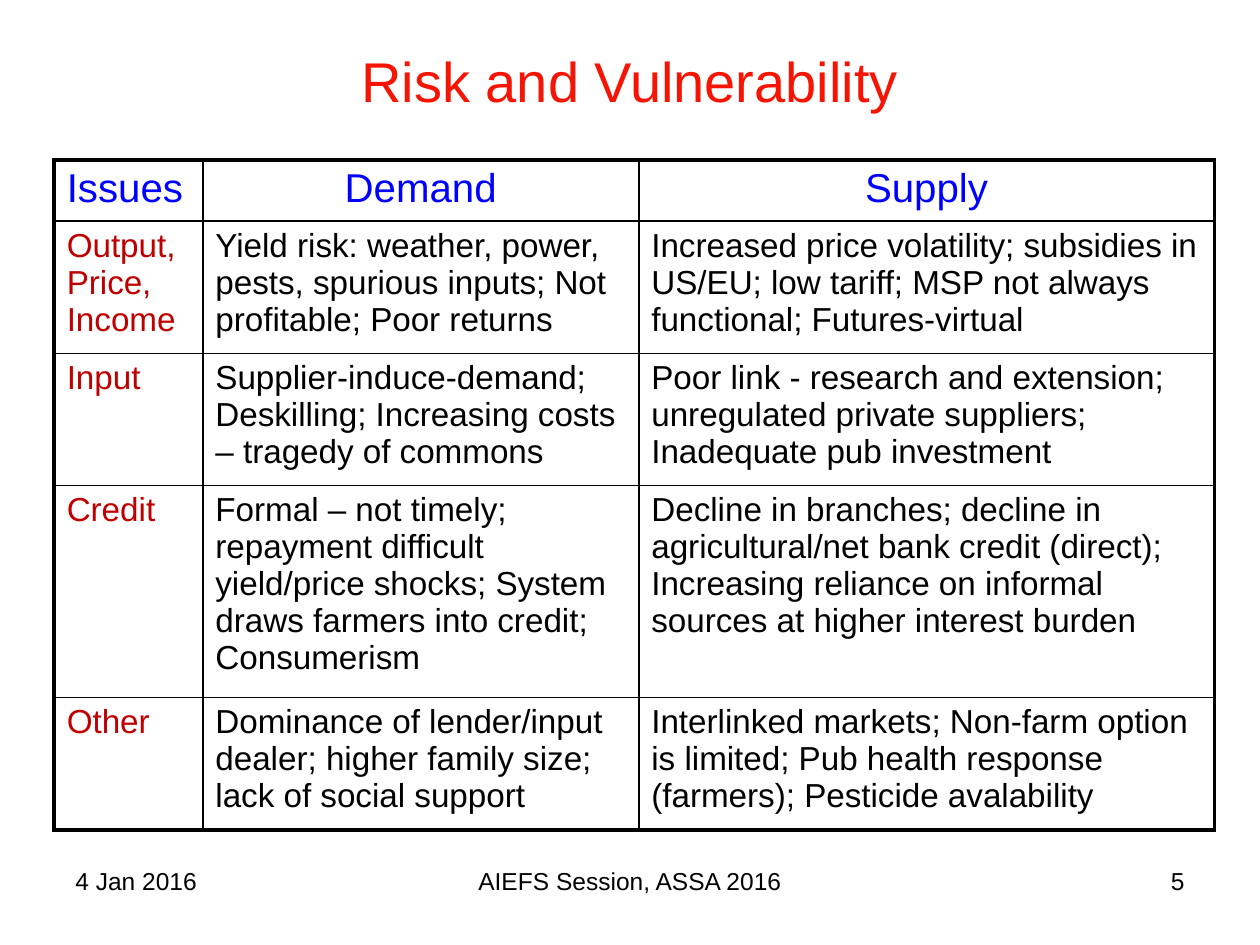
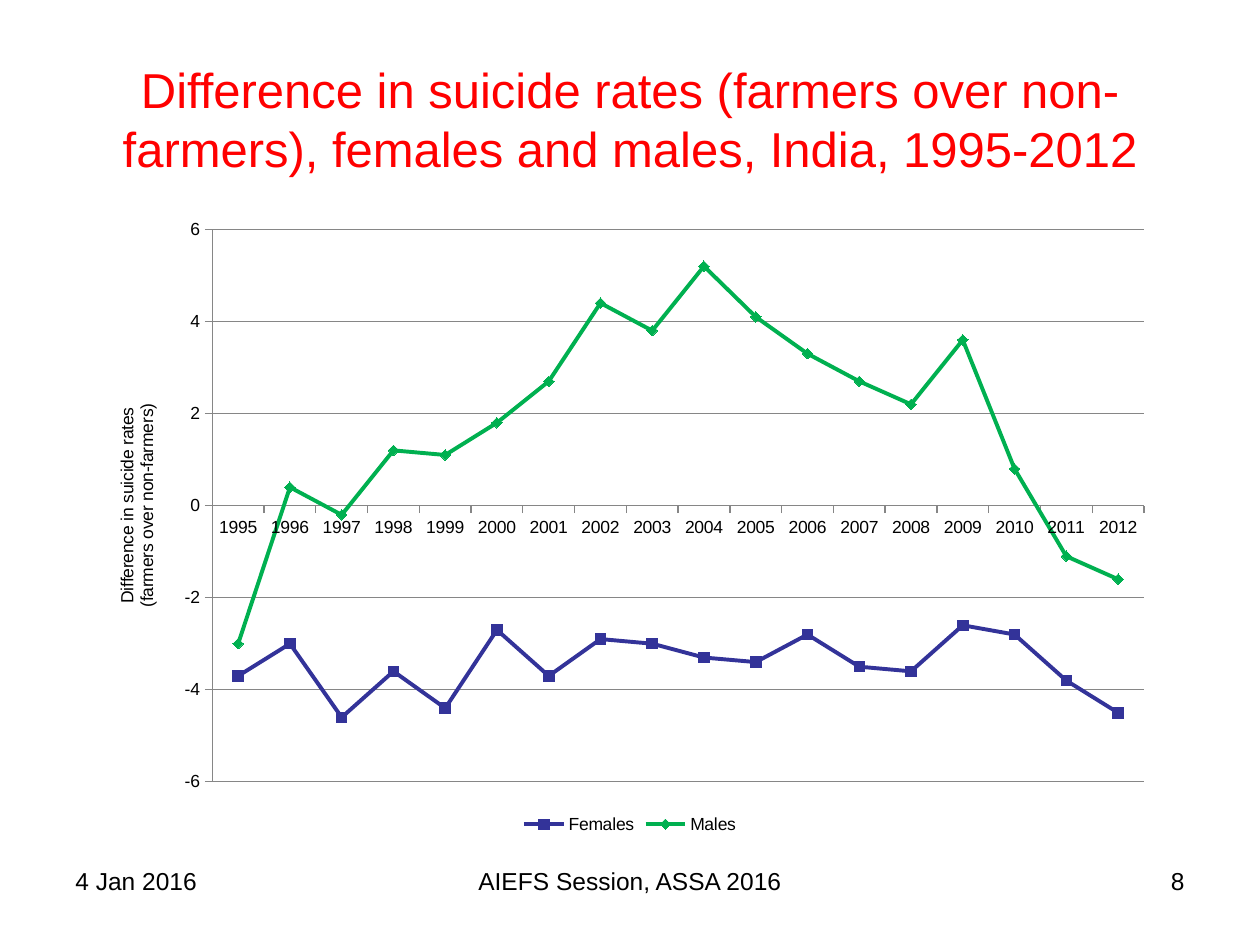
from lxml import etree
from pptx import Presentation
from pptx.chart.data import CategoryChartData
from pptx.dml.color import RGBColor
from pptx.enum.chart import XL_CHART_TYPE, XL_LEGEND_POSITION, XL_MARKER_STYLE, XL_TICK_MARK
from pptx.enum.text import MSO_ANCHOR, PP_ALIGN
from pptx.oxml import parse_xml
from pptx.oxml.ns import nsdecls, qn
from pptx.util import Inches, Pt

LEFT, CENTER, RIGHT = PP_ALIGN.LEFT, PP_ALIGN.CENTER, PP_ALIGN.RIGHT
TOP, MIDDLE = MSO_ANCHOR.TOP, MSO_ANCHOR.MIDDLE
LINE_MARKERS = XL_CHART_TYPE.LINE_MARKERS
LEGEND_BOTTOM = XL_LEGEND_POSITION.BOTTOM
SQUARE, DIAMOND = XL_MARKER_STYLE.SQUARE, XL_MARKER_STYLE.DIAMOND
OUTSIDE = XL_TICK_MARK.OUTSIDE

FONT = "Arial"
COLORS = {
    "title": "F61504",
    "chart title": "FF0000",
    "header": "0000FF",
    "issue": "C00000",
    "text": "000000",
    "axis": "868686",
    "females": "333399",
    "males": "00B050",
    "paper": "FFFFFF",
}

deck = Presentation()
deck.slide_width, deck.slide_height = Inches(10), Inches(7.5)
WIDTH, HEIGHT = deck.slide_width, deck.slide_height
MARGIN = 0.05


def style_text(frame, size, color, align=LEFT, anchor=TOP):
    frame.word_wrap = True
    frame.vertical_anchor = anchor
    for para in frame.paragraphs:
        para.alignment = align
        for span in para.runs:
            span.font.name = FONT
            span.font.size = Pt(size)
            span.font.bold = False
            span.font.color.rgb = RGBColor.from_string(COLORS[color])


def add_text(page, text, left, top, width, height, *style):
    box = page.shapes.add_textbox(
        int(left * WIDTH), int(top * HEIGHT), int(width * WIDTH), int(height * HEIGHT))
    box.text_frame.text = text
    style_text(box.text_frame, *style)


titles = [
    ("Risk and Vulnerability", 0.09, 32, "title", 5),
    ("Difference in suicide rates (farmers over non-farmers), females and males, India, 1995-2012",
     0.17, 28, "chart title", 8),
]
pages = []
for title, height, size, color, number in titles:
    page = deck.slides.add_slide(deck.slide_layouts[6])
    add_text(page, title, MARGIN, 0.04, 1 - 2 * MARGIN, height, size, color, CENTER, MIDDLE)
    footers = [
        ("4 Jan 2016", MARGIN, 0.23, LEFT),
        ("AIEFS Session, ASSA 2016", 0.34, 0.32, CENTER),
        (str(number), 1 - MARGIN - 0.23, 0.23, RIGHT),
    ]
    for text, left, width, align in footers:
        add_text(page, text, left, 0.91, width, 0.07, 14, "text", align)
    pages.append(page)
risk_page, chart_page = pages

risk_rows = [
    ("Issues", "Demand", "Supply"),
    ("Output, Price, Income",
     "Yield risk: weather, power, pests, spurious inputs; Not profitable; Poor returns",
     "Increased price volatility; subsidies in US/EU; low tariff; MSP not always functional; Futures-virtual"),
    ("Input",
     "Supplier-induce-demand; Deskilling; Increasing costs – tragedy of commons",
     "Poor link - research and extension; unregulated private suppliers; Inadequate pub investment"),
    ("Credit",
     "Formal – not timely; repayment difficult yield/price shocks; System draws farmers into credit; Consumerism",
     "Decline in branches; decline in agricultural/net bank credit (direct); Increasing reliance on informal "
     "sources at higher interest burden"),
    ("Other",
     "Dominance of lender/input dealer; higher family size; lack of social support",
     "Interlinked markets; Non-farm option is limited; Pub health response (farmers); Pesticide avalability"),
]
column_widths = [1.18, 3.46, 4.57]
row_heights = [0.48, 1.05, 1.05, 1.68, 1.05]
last_row, last_column = len(row_heights) - 1, len(column_widths) - 1

risk_table = risk_page.shapes.add_table(
    len(row_heights), len(column_widths), Inches(0.43), Inches(1.27),
    Inches(sum(column_widths)), Inches(sum(row_heights))).table
risk_table.first_row = risk_table.horz_banding = False
for column, width in zip(risk_table.columns, column_widths):
    column.width = Inches(width)
for row, height in zip(risk_table.rows, row_heights):
    row.height = Inches(height)

for r, texts in enumerate(risk_rows):
    for c, text in enumerate(texts):
        cell = risk_table.cell(r, c)
        cell.text_frame.text = text
        if r == 0:
            style_text(cell.text_frame, 23, "header", CENTER if c else LEFT)
        else:
            style_text(cell.text_frame, 19, "text" if c else "issue")
        outer_sides = {"lnL": c == 0, "lnR": c == last_column, "lnT": r == 0, "lnB": r == last_row}
        properties = cell._tc.get_or_add_tcPr()
        for side, outer in outer_sides.items():
            border = etree.SubElement(properties, qn("a:" + side), w=str(Pt(2.25 if outer else 1)))
            fill = etree.SubElement(border, qn("a:solidFill"))
            etree.SubElement(fill, qn("a:srgbClr"), val=COLORS["text"])
        cell.fill.solid()
        cell.fill.fore_color.rgb = RGBColor.from_string(COLORS["paper"])

rates = CategoryChartData()
rates.categories = [str(year) for year in range(1995, 2013)]
rates.add_series("Females", [-3.7, -3, -4.6, -3.6, -4.4, -2.7, -3.7, -2.9, -3,
                             -3.3, -3.4, -2.8, -3.5, -3.6, -2.6, -2.8, -3.8, -4.5])
rates.add_series("Males", [-3, 0.4, -0.2, 1.2, 1.1, 1.8, 2.7, 4.4, 3.8,
                           5.2, 4.1, 3.3, 2.7, 2.2, 3.6, 0.8, -1.1, -1.6])
chart = chart_page.shapes.add_chart(
    LINE_MARKERS, Inches(0.75), Inches(1.62), Inches(8.5), Inches(5.04), rates).chart
chart.has_title = False
chart.font.name = FONT
chart.font.size = Pt(10)
chart.font.color.rgb = RGBColor.from_string(COLORS["text"])
chart.has_legend = True
chart.legend.position = LEGEND_BOTTOM
chart.legend.include_in_layout = False
chart.plots[0].vary_by_categories = False

for series, marker in zip(chart.plots[0].series, (SQUARE, DIAMOND)):
    color = RGBColor.from_string(COLORS[series.name.lower()])
    series.smooth = False
    series.format.line.width = Pt(2.25)
    series.format.line.color.rgb = color
    series.marker.style = marker
    series.marker.size = 6
    series.marker.format.fill.solid()
    series.marker.format.fill.fore_color.rgb = color
    series.marker.format.line.color.rgb = color

value_axis = chart.value_axis
value_axis.minimum_scale, value_axis.maximum_scale, value_axis.major_unit = -6, 6, 2
value_axis.has_major_gridlines = True
value_axis.tick_labels.number_format = "0"
value_axis.tick_labels.number_format_is_linked = False
value_axis.axis_title.text_frame.text = "Difference in suicide rates\n(farmers over non-farmers)"
style_text(value_axis.axis_title.text_frame, 10, "text", CENTER)
for axis in (value_axis, chart.category_axis):
    axis.major_tick_mark = OUTSIDE
for lines in (value_axis, chart.category_axis, value_axis.major_gridlines):
    lines.format.line.width = Pt(0.75)
    lines.format.line.color.rgb = RGBColor.from_string(COLORS["axis"])

plot_area = chart._chartSpace.chart.plotArea
for old_layout in plot_area.findall(qn("c:layout")):
    plot_area.remove(old_layout)
plot_area.insert(0, parse_xml(
    f'<c:layout {nsdecls("c")}><c:manualLayout><c:layoutTarget val="inner"/>'
    '<c:xMode val="edge"/><c:yMode val="edge"/><c:x val="0.11"/><c:y val="0.04"/>'
    '<c:w val="0.87"/><c:h val="0.87"/></c:manualLayout></c:layout>'))

deck.save("out.pptx")
